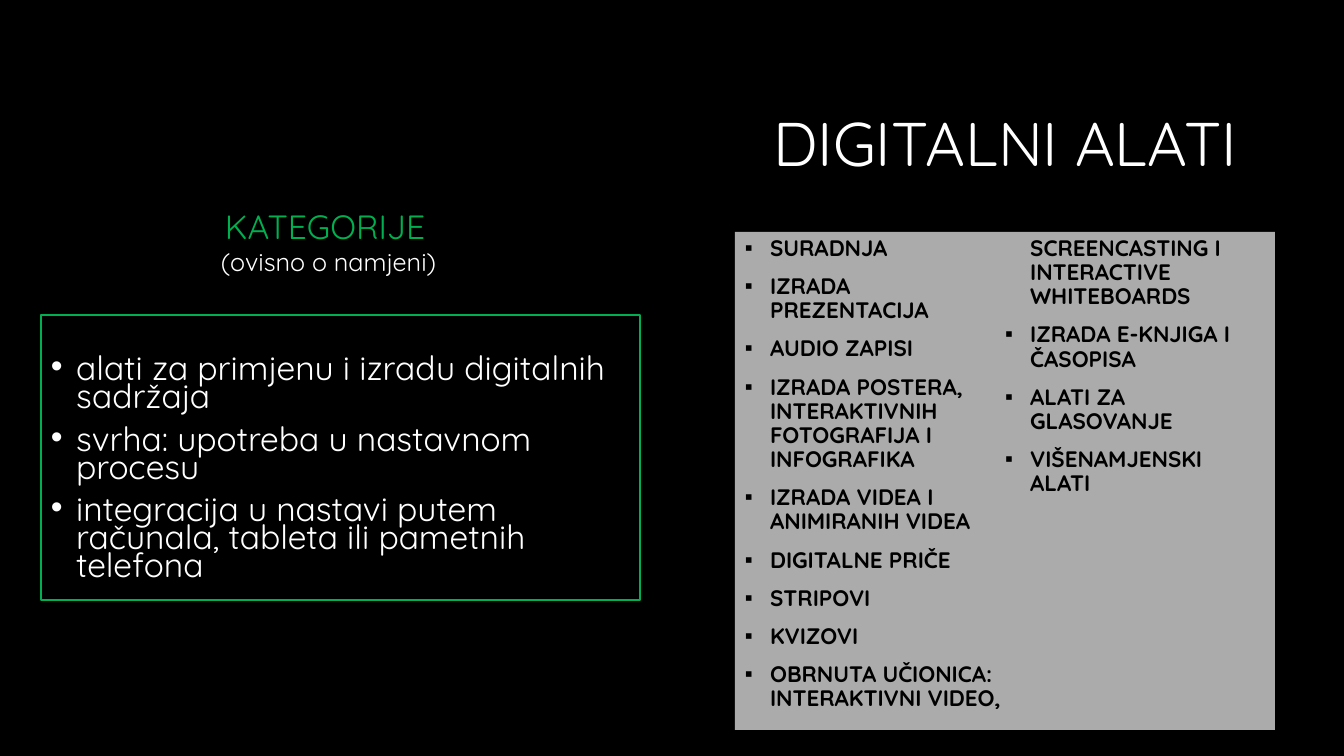
import pptx
import pptx.util
import pptx.dml.color
import pptx.enum.shapes
import pptx.enum.text
import pptx.oxml.ns
import lxml.etree

PX = 9071.43  # EMU per px, at 100.8 px to the inch
FONT = "Quicksand"
HUES = {"back": "000000", "text": "FFFFFF", "green": "00B050",
        "panel": "F2F2F2", "dark": "000000"}
AIMS = ["alati za primjenu i izradu digitalnih sadržaja",
        "svrha: upotreba u nastavnom procesu",
        "integracija u nastavi putem računala, tableta ili pametnih telefona"]
TOOLS = ["SURADNJA", "IZRADA PREZENTACIJA", "AUDIO ZAPISI",
         "IZRADA POSTERA, INTERAKTIVNIH FOTOGRAFIJA I INFOGRAFIKA",
         "IZRADA VIDEA I ANIMIRANIH VIDEA", "DIGITALNE PRIČE", "STRIPOVI",
         "KVIZOVI",
         "OBRNUTA UČIONICA: INTERAKTIVNI VIDEO, SCREENCASTING I "
         "INTERACTIVE WHITEBOARDS",
         "IZRADA E-KNJIGA I ČASOPISA", "ALATI ZA GLASOVANJE",
         "VIŠENAMJENSKI ALATI"]


def emu(px):
    return pptx.util.Emu(round(px * PX))


def hue(name):
    return pptx.dml.color.RGBColor.from_string(HUES[name])


def add_node(parent, tag, **attrs):
    node = lxml.etree.SubElement(parent, pptx.oxml.ns.qn(tag))
    for key, value in attrs.items():
        node.set(key, value)


def add_run(para, text, size, color, bold=False):
    run = para.add_run()
    run.text = text
    font = run.font
    font.name, font.size, font.bold = FONT, pptx.util.Pt(size), bold
    font.color.rgb = hue(color)


def next_para(frame, first):
    return frame.paragraphs[0] if first else frame.add_paragraph()


def add_text(slide, place, lines):
    """Centred text; each line is a list of (text, size, color) runs."""
    frame = slide.shapes.add_textbox(*map(emu, place)).text_frame
    frame.word_wrap = True
    frame.vertical_anchor = pptx.enum.text.MSO_ANCHOR.MIDDLE
    for i, runs in enumerate(lines):
        para = next_para(frame, i == 0)
        para.alignment = pptx.enum.text.PP_ALIGN.CENTER
        for run in runs:
            add_run(para, *run)


def add_panel(slide, place):
    kind = pptx.enum.shapes.MSO_SHAPE.RECTANGLE
    panel = slide.shapes.add_shape(kind, *map(emu, place))
    panel.shadow.inherit = False
    panel.fill.background()
    panel.line.fill.background()
    return panel


def fill_list(panel, items, mark, size, color, pitch, top=5, bold=False):
    frame = panel.text_frame
    frame.word_wrap = True
    frame.vertical_anchor = pptx.enum.text.MSO_ANCHOR.TOP
    frame.margin_top = emu(top)
    for i, item in enumerate(items):
        para = next_para(frame, i == 0)
        para.alignment = pptx.enum.text.PP_ALIGN.LEFT
        para.line_spacing = pitch
        if i:
            para.space_before = pptx.util.Pt(10)
        props = para._p.get_or_add_pPr()
        indent = pptx.util.Inches(0.25)
        props.set("marL", str(indent))
        props.set("indent", str(-indent))
        add_node(props, "a:buFont", typeface="Arial")
        add_node(props, "a:buChar", char=mark)
        add_run(para, item, size, color, bold)


def main():
    deck = pptx.Presentation()
    deck.slide_width, deck.slide_height = emu(1344), emu(756)
    slide = deck.slides.add_slide(deck.slide_layouts[6])
    slide.background.fill.solid()
    slide.background.fill.fore_color.rgb = hue("back")

    add_text(slide, (762, 68, 487, 147), [[("DIGITALNI ALATI", 44, "text")]])

    aims = add_panel(slide, (41, 315, 599, 285))
    aims.line.color.rgb = hue("green")
    aims.line.width = pptx.util.Pt(2)
    fill_list(aims, AIMS, "•", 24, "text", 0.7, top=43)

    tools = add_panel(slide, (735, 232, 540, 498))
    tools.fill.solid()
    tools.fill.fore_color.rgb = hue("panel")
    shade = tools._element.spPr.find(".//" + pptx.oxml.ns.qn("a:srgbClr"))
    add_node(shade, "a:alpha", val="71000")
    tools.text_frame._txBody.bodyPr.set("numCol", "2")
    fill_list(tools, TOOLS, "▪", 16, "dark", 0.9, bold=True)

    add_text(slide, (184, 200, 289, 82),
             [[("KATEGORIJE", 24, "green"), (" ", 18, "text")],
              [("(ovisno o namjeni)", 18, "text")]])
    deck.save("out.pptx")


if __name__ == "__main__":
    main()
